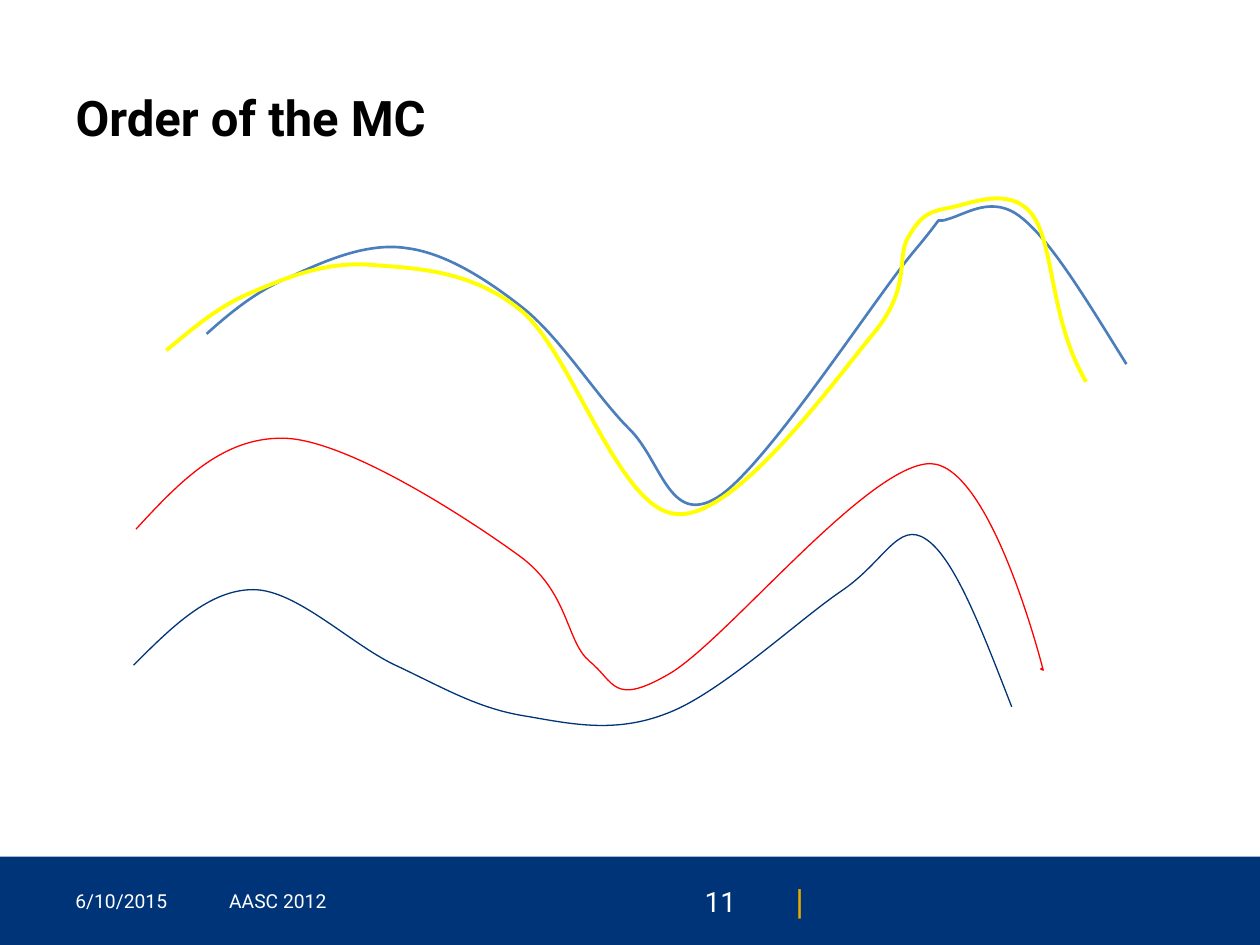
from dataclasses import dataclass

from lxml.etree import SubElement
from pptx import Presentation
from pptx.dml.color import RGBColor
from pptx.enum.shapes import MSO_SHAPE
from pptx.enum.text import MSO_ANCHOR, MSO_AUTO_SIZE, PP_ALIGN as Align
from pptx.oxml.ns import qn
from pptx.util import Cm, Pt


@dataclass(frozen=True)
class Theme:
    font: str = "Roboto"
    navy: str = "003478"
    blue: str = "4B7EBC"
    yellow: str = "FFFF00"
    red: str = "FF0000"
    gold: str = "EAAB00"
    white: str = "FFFFFF"
    black: str = "000000"
    title_size: float = 28
    number_size: float = 16
    divider_size: float = 20
    footer_size: float = 11


THEME = Theme()
TITLE = "Order of the MC"
FOOTER_TOP, FOOTER_HEIGHT = 17.65, 1.02

FOOTER = [
    ("|", 15.47, 0.99, Align.RIGHT, THEME.divider_size, THEME.gold),
    ("6/10/2015", 1.27, 2.69, Align.LEFT, THEME.footer_size, THEME.white),
    ("AASC 2012", 4.37, 8.05, Align.LEFT, THEME.footer_size, THEME.white),
    ("11", 12.7, 2.39, Align.RIGHT, THEME.number_size, THEME.white),
]

CURVE_UNIT = Cm(2.54) / 100
CURVES = [
    (THEME.blue, 1.5, (164, 265), [
        [(184, 247), (205, 230), (232, 219)],
        [(258, 207), (292, 192), (323, 197)],
        [(354, 201), (387, 222), (417, 246)],
        [(446, 270), (474, 315), (499, 340)],
        [(525, 365), (531, 418), (569, 395)],
        [(607, 372), (694, 237), (725, 200)],
        [(756, 163), (738, 179), (752, 174)],
        [(767, 170), (788, 154), (811, 173)],
        [(835, 192), (864, 241), (894, 289)],
    ]),
    (THEME.yellow, 2.25, (132, 278), [
        [(153, 261), (173, 243), (200, 232)],
        [(226, 221), (256, 208), (292, 210)],
        [(327, 213), (372, 213), (413, 246)],
        [(454, 279), (491, 405), (537, 408)],
        [(584, 412), (663, 301), (693, 265)],
        [(724, 228), (711, 204), (721, 188)],
        [(731, 171), (737, 168), (753, 165)],
        [(770, 162), (801, 147), (819, 170)],
        [(837, 193), (833, 254), (862, 303)],
    ]),
    (THEME.red, 0.75, (108, 420), [
        [(143, 382), (178, 345), (229, 348)],
        [(280, 352), (372, 412), (412, 441)],
        [(452, 470), (449, 509), (468, 525)],
        [(488, 541), (486, 561), (531, 535)],
        [(576, 509), (688, 369), (738, 368)],
        [(787, 368), (828, 532), (828, 532)],
        [(828, 532), (826, 531), (826, 531)],
        [(826, 530), (827, 531), (828, 531)],
    ]),
    (THEME.navy, 0.75, (106, 528), [
        [(136, 498), (166, 468), (201, 468)],
        [(236, 468), (280, 513), (316, 529)],
        [(352, 546), (379, 562), (415, 568)],
        [(451, 574), (487, 583), (530, 566)],
        [(572, 550), (634, 492), (668, 469)],
        [(702, 446), (713, 413), (735, 428)],
        [(758, 443), (780, 502), (803, 561)],
    ]),
]


def format_text(shape, text, size, color, align=Align.LEFT, bold=False):
    frame = shape.text_frame
    frame.text = text
    frame.word_wrap = True
    frame.auto_size = MSO_AUTO_SIZE.NONE
    frame.vertical_anchor = MSO_ANCHOR.MIDDLE
    paragraph = frame.paragraphs[0]
    paragraph.alignment = align
    font = paragraph.runs[0].font
    font.name, font.size, font.bold = THEME.font, Pt(size), bold
    font.color.rgb = RGBColor.from_string(color)


def add_curve(shapes, color, width, start, segments):
    builder = shapes.build_freeform(*start, scale=CURVE_UNIT)
    builder.add_line_segments([point for segment in segments for point in segment], close=False)
    shape = builder.convert_to_shape()
    path = shape.element.find(".//" + qn("a:path"))
    lines = path.findall(qn("a:lnTo"))
    for index in range(0, len(lines), 3):
        bezier = SubElement(path, qn("a:cubicBezTo"))
        for line in lines[index:index + 3]:
            bezier.append(line[0])
            path.remove(line)
    shape.shadow.inherit = False
    shape.fill.background()
    shape.line.color.rgb = RGBColor.from_string(color)
    shape.line.width = Pt(width)


def main():
    presentation = Presentation()
    presentation.slide_width, presentation.slide_height = Cm(25.4), Cm(19.05)
    slide = presentation.slides.add_slide(presentation.slide_layouts[5])
    shapes = slide.shapes

    band = shapes.add_shape(MSO_SHAPE.RECTANGLE, 0, Cm(17.27), Cm(25.4), Cm(1.78))
    band.shadow.inherit = False
    band.fill.solid()
    band.fill.fore_color.rgb = RGBColor.from_string(THEME.navy)
    band.line.fill.background()

    title = shapes.title
    title.left, title.top, title.width, title.height = Cm(1.27), Cm(0.76), Cm(22.86), Cm(3.18)
    format_text(title, TITLE, THEME.title_size, THEME.black, bold=True)

    for text, left, width, align, size, color in FOOTER:
        box = shapes.add_textbox(Cm(left), Cm(FOOTER_TOP), Cm(width), Cm(FOOTER_HEIGHT))
        format_text(box, text, size, color, align)

    group = shapes.add_group_shape()
    for curve in CURVES:
        add_curve(group.shapes, *curve)

    presentation.save("out.pptx")


if __name__ == "__main__":
    main()
